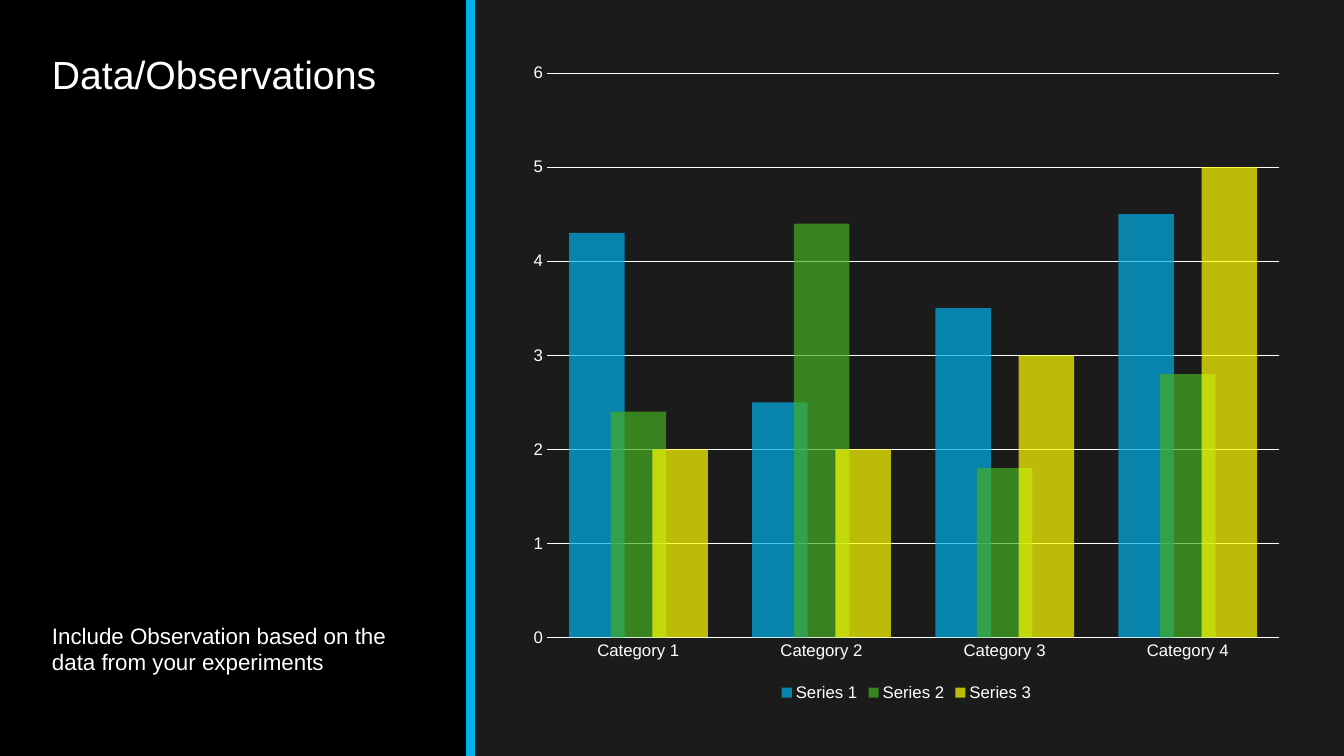
from lxml.etree import SubElement
from pptx import Presentation
from pptx.chart.data import CategoryChartData
from pptx.dml.color import RGBColor
from pptx.enum.chart import XL_CHART_TYPE, XL_LEGEND_POSITION, XL_TICK_MARK
from pptx.enum.shapes import MSO_CONNECTOR, MSO_SHAPE
from pptx.enum.text import MSO_ANCHOR
from pptx.oxml.ns import qn
from pptx.util import Pt

FONT = "Arial"
WHITE, BLACK, BACKGROUND, BLUE = "FFFFFF", "000000", "1B1B1B", "00B0EA"
W, H, PANEL_W = 960, 540, 336
CATEGORIES = ["Category 1", "Category 2", "Category 3", "Category 4"]
SERIES = [
    ("Series 1", (4.3, 2.5, 3.5, 4.5), BLUE),
    ("Series 2", (2.4, 4.4, 1.8, 2.8), "45AE22"),
    ("Series 3", (2, 2, 3, 5), "FFFF00"),
]


def rgb(color):
    """Turn a hex string into a colour."""
    return RGBColor.from_string(color)


def set_fill(fill, color, alpha=100):
    """Apply a solid fill with an opacity in percent."""
    fill.solid()
    fill.fore_color.rgb = rgb(color)
    if alpha < 100:
        clr = fill._xPr.find(qn("a:solidFill"))[0]
        SubElement(clr, qn("a:alpha"), val=str(alpha * 1000))


def set_line(line, color, width):
    """Apply a solid line."""
    set_fill(line.fill, color)
    line.width = Pt(width)


def set_font(font, size):
    """Apply the slide's typeface in white."""
    font.name, font.size = FONT, Pt(size)
    font.color.rgb = rgb(WHITE)


def add_panel(s):
    """Add the black side panel and its blue edge."""
    sp = s.shapes.add_shape(MSO_SHAPE.RECTANGLE, 0, 0, Pt(PANEL_W), Pt(H))
    sp.shadow.inherit = False
    set_fill(sp.fill, BLACK)
    sp.line.fill.background()
    edge = s.shapes.add_connector(MSO_CONNECTOR.STRAIGHT, Pt(PANEL_W), 0, Pt(PANEL_W), Pt(H))
    set_line(edge.line, BLUE, 6)
    SubElement(edge._element.spPr, qn("a:effectLst"))


def add_text(s, text, top, height, size, anchor=MSO_ANCHOR.TOP, spacing=1.0, before=0):
    """Add a text box in the side panel."""
    tf = s.shapes.add_textbox(Pt(30), Pt(top), Pt(276), Pt(height)).text_frame
    tf.word_wrap = True
    tf.vertical_anchor = anchor
    tf.text = text
    p = tf.paragraphs[0]
    p.line_spacing, p.space_before = spacing, Pt(before)
    set_font(p.runs[0].font, size)


def format_axis(axis):
    """Remove tick marks and set the label font."""
    axis.major_tick_mark = axis.minor_tick_mark = XL_TICK_MARK.NONE
    set_font(axis.tick_labels.font, 12)


def add_column_chart(s):
    """Add the clustered columns with see-through overlapping bars."""
    data = CategoryChartData()
    data.categories = CATEGORIES
    for name, values, _ in SERIES:
        data.add_series(name, values)
    chart = s.shapes.add_chart(XL_CHART_TYPE.COLUMN_CLUSTERED, Pt(370), Pt(36.5),
                               Pt(555), Pt(467.5), data).chart
    chart.has_title = False
    set_font(chart.font, 10)
    chart.has_legend = True
    chart.legend.position = XL_LEGEND_POSITION.BOTTOM
    chart.legend.include_in_layout = False
    set_font(chart.legend.font, 12)
    format_axis(chart.category_axis)
    set_line(chart.category_axis.format.line, WHITE, 1.25)
    axis = chart.value_axis
    format_axis(axis)
    axis.minimum_scale, axis.maximum_scale, axis.major_unit = 0, 6, 1
    axis.format.line.fill.background()
    set_line(axis.major_gridlines.format.line, WHITE, 0.75)
    plot = chart.plots[0]
    plot.vary_by_categories = False
    plot.gap_width, plot.overlap = 80, 25
    for series, (_, _, color) in zip(plot.series, SERIES):
        set_fill(series.format.fill, color, 70)


def main():
    """Build and save the slide."""
    prs = Presentation()
    prs.slide_width, prs.slide_height = Pt(W), Pt(H)
    s = prs.slides.add_slide(prs.slide_layouts[6])
    set_fill(s.background.fill, BACKGROUND)
    add_panel(s)
    add_text(s, "Data/Observations", 36.5, 126, 28, spacing=0.9)
    add_column_chart(s)
    add_text(s, "Include Observation based on the data from your experiments",
             295, 191, 16, anchor=MSO_ANCHOR.BOTTOM, before=12)
    prs.save("out.pptx")


if __name__ == "__main__":
    main()
